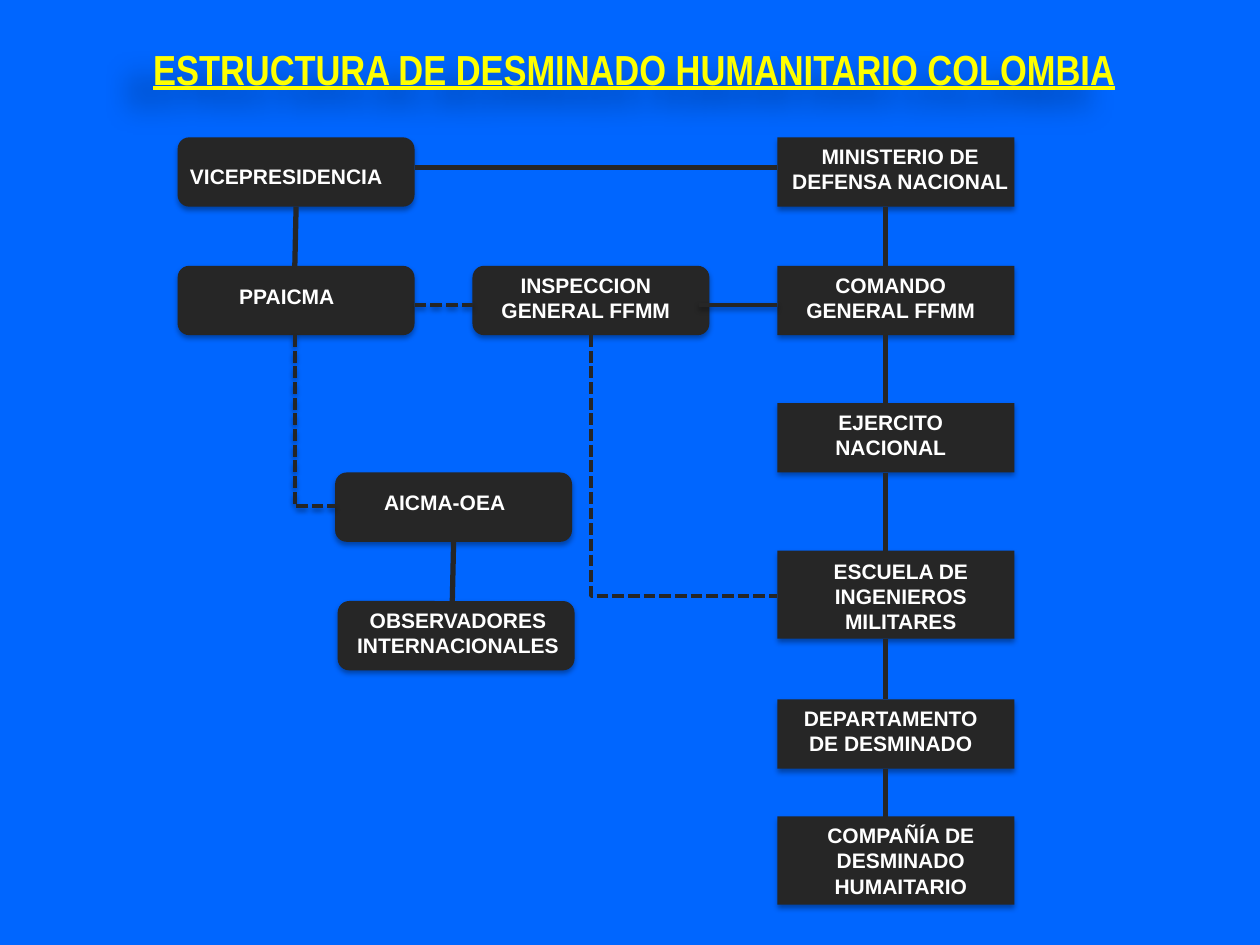
from lxml import etree
from pptx import Presentation, util as u
from pptx.dml.color import RGBColor
from pptx.enum import dml, shapes, text
from pptx.oxml.ns import qn

BLUE = RGBColor(0x00, 0x66, 0xFF)
DARK = RGBColor(0x26, 0x26, 0x26)
YELLOW = RGBColor(0xFF, 0xFF, 0x00)
WHITE = RGBColor(0xFF, 0xFF, 0xFF)

ROUND = shapes.MSO_SHAPE.ROUNDED_RECTANGLE
RECT = shapes.MSO_SHAPE.RECTANGLE
CENTER = text.PP_ALIGN.CENTER
LEFT = text.PP_ALIGN.LEFT

# Grid in inches
WIDTH, LOW, TALL = 1.88, 0.55, 0.7
COL_A, COL_B, COL_C, COL_MID = 1.41, 3.75, 6.17, 2.66
ROW_1, ROW_2, ROW_3 = 1.09, 2.11, 3.2
ROW_AICMA, ROW_SCHOOL, ROW_OBSERVERS = 3.75, 4.37, 4.77
ROW_DEPARTMENT, ROW_COMPANY = 5.55, 6.48
AXIS_A, AXIS_B, AXIS_C, AXIS_MID = 2.35, 4.69, 7.03, 3.6
LABEL_HEIGHT = {1: 0.3, 2: 0.51, 3: 0.71}

TITLE = "ESTRUCTURA DE DESMINADO HUMANITARIO COLOMBIA"

# outline, column, row, height, label, label lines, label offset, label width, alignment
UNITS = [
    (ROUND, COL_A, ROW_1, LOW, "VICEPRESIDENCIA", 1, (0, 0.16), 1.8, LEFT),
    (ROUND, COL_A, ROW_2, LOW, "PPAICMA", 1, (0.39, 0.09), 1.09, LEFT),
    (ROUND, COL_B, ROW_2, LOW, "INSPECCION GENERAL FFMM", 2, (0, 0), 1.8, CENTER),
    (RECT, COL_C, ROW_1, LOW, "MINISTERIO DE DEFENSA NACIONAL", 2, (-0.08, 0), 2.11, CENTER),
    (RECT, COL_C, ROW_2, LOW, "COMANDO GENERAL FFMM", 2, (0, 0), 1.8, CENTER),
    (RECT, COL_C, ROW_3, LOW, "EJERCITO NACIONAL", 2, (0, 0), 1.8, CENTER),
    (RECT, COL_C, ROW_SCHOOL, TALL, "ESCUELA DE INGENIEROS MILITARES", 3, (0.08, 0.01), 1.8, CENTER),
    (RECT, COL_C, ROW_DEPARTMENT, LOW, "DEPARTAMENTO DE DESMINADO", 2, (0, 0), 1.8, CENTER),
    (RECT, COL_C, ROW_COMPANY, TALL, "COMPAÑÍA DE DESMINADO HUMAITARIO", 3, (0.08, 0), 1.8, CENTER),
    (ROUND, COL_MID, ROW_AICMA, LOW, "AICMA-OEA", 1, (0.29, 0.09), 1.26, LEFT),
    (ROUND, COL_MID + 0.02, ROW_OBSERVERS, LOW, "OBSERVADORES INTERNACIONALES", 2, (-0.02, 0), 1.95, CENTER),
]

# Top and bottom of each link in the military chain of command
CHAIN = [
    (ROW_1 + LOW, ROW_2),
    (ROW_2 + LOW, ROW_3),
    (ROW_3 + LOW, ROW_SCHOOL),
    (ROW_SCHOOL + TALL, ROW_DEPARTMENT),
    (ROW_DEPARTMENT + LOW, ROW_COMPANY + 0.08),
]
COMMAND_LINES = [((AXIS_C, top), (AXIS_C, bottom)) for top, bottom in CHAIN] + [
    ((COL_A + WIDTH, 1.33), (COL_C, 1.33)),
    ((AXIS_A, ROW_1 + LOW), (AXIS_A - 0.01, ROW_2)),
    ((AXIS_MID, ROW_AICMA + LOW), (AXIS_MID - 0.01, ROW_OBSERVERS)),
]
# start, end, dashed, bent, shadow
COORDINATION_LINES = [
    ((AXIS_A - 0.01, ROW_2 + LOW), (COL_MID, 4.02), True, True, True),
    ((COL_A + WIDTH, 2.42), (COL_B, 2.42), True, False, True),
    ((5.55, 2.42), (COL_C, 2.42), False, False, True),
    ((AXIS_B, ROW_2 + LOW), (COL_C, 4.73), True, True, False),
]


def set_shadow(item, blur=0, distance=0, angle=90, opacity=0):
    """Give the item its own effect list; zero opacity leaves it empty."""
    properties = item._element.spPr
    effects = properties.find(qn("a:effectLst"))
    if effects is None:
        effects = etree.SubElement(properties, qn("a:effectLst"))
    if opacity:
        shadow = etree.SubElement(
            effects, qn("a:outerShdw"), blurRad=str(u.Pt(blur)),
            dist=str(u.Pt(distance)), dir=str(angle * 60000), rotWithShape="0")
        color = etree.SubElement(shadow, qn("a:srgbClr"), val="000000")
        etree.SubElement(color, qn("a:alpha"), val=str(opacity * 1000))


def write(box, content, size=12, font="Arial", color=WHITE, align=CENTER, underline=None):
    frame = box.text_frame
    frame.word_wrap = True
    para = frame.paragraphs[0]
    para.alignment = align
    span = para.add_run()
    span.text = content
    span.font.size = u.Pt(size)
    span.font.name = font
    span.font.bold = True
    span.font.underline = underline
    span.font.color.rgb = color


def add_box(page, outline, left, top, width, height, fill=None):
    box = page.shapes.add_shape(outline, *map(u.Inches, (left, top, width, height)))
    box.shadow.inherit = False
    box.line.fill.background()
    if fill is None:
        box.fill.background()
    else:
        box.fill.solid()
        box.fill.fore_color.rgb = fill
    return box


def add_unit(page, outline, left, top, height, label, lines, offset, label_width, align):
    box = add_box(page, outline, left, top, WIDTH, height, DARK)
    set_shadow(box, 3.1, 1.8, opacity=35)
    caption = page.shapes.add_textbox(*map(u.Inches, (
        left + offset[0], top + offset[1], label_width, LABEL_HEIGHT[lines])))
    write(caption, label, align=align)
    caption.text_frame.auto_size = text.MSO_AUTO_SIZE.SHAPE_TO_FIT_TEXT


def bend_down_then_right(line, start, end):
    """Make a one-corner elbow: a quarter turn of the mirrored preset."""
    across, down = end[0] - start[0], end[1] - start[1]
    line.left = u.Inches((start[0] + end[0] - down) / 2)
    line.top = u.Inches((start[1] + end[1] - across) / 2)
    line.width, line.height = u.Inches(down), u.Inches(across)
    properties = line._element.spPr
    properties.find(qn("a:prstGeom")).set("prst", "bentConnector2")
    frame = properties.find(qn("a:xfrm"))
    frame.set("rot", str(270 * 60000))
    frame.set("flipH", "1")


def add_line(page, start, end, weight=3, dashed=False, bent=False, shadow=False):
    kind = shapes.MSO_CONNECTOR.ELBOW if bent else shapes.MSO_CONNECTOR.STRAIGHT
    line = page.shapes.add_connector(kind, *map(u.Inches, (*start, *end)))
    if bent:
        bend_down_then_right(line, start, end)
    line.line.color.rgb = DARK
    line.line.width = u.Pt(weight)
    if dashed:
        line.line.dash_style = dml.MSO_LINE.SQUARE_DOT
    set_shadow(line, 3.1, 1.6, opacity=38 if shadow else 0)


def main():
    deck = Presentation()
    deck.slide_width, deck.slide_height = u.Inches(10), u.Inches(7.5)
    page = deck.slides.add_slide(deck.slide_layouts[6])
    page.background.fill.solid()
    page.background.fill.fore_color.rgb = BLUE

    title = add_box(page, ROUND, 0.31, 0.23, 9.45, 0.63)
    title.text_frame.vertical_anchor = text.MSO_ANCHOR.MIDDLE
    write(title, TITLE, size=24, font="Arial Narrow", color=YELLOW, underline=True)
    set_shadow(title, 15, 18, angle=145, opacity=35)

    for unit in UNITS:
        add_unit(page, *unit)
    for start, end in COMMAND_LINES:
        add_line(page, start, end)
    for start, end, dashed, bent, shadow in COORDINATION_LINES:
        add_line(page, start, end, 2.25, dashed, bent, shadow)
    deck.save("out.pptx")


if __name__ == "__main__":
    main()
